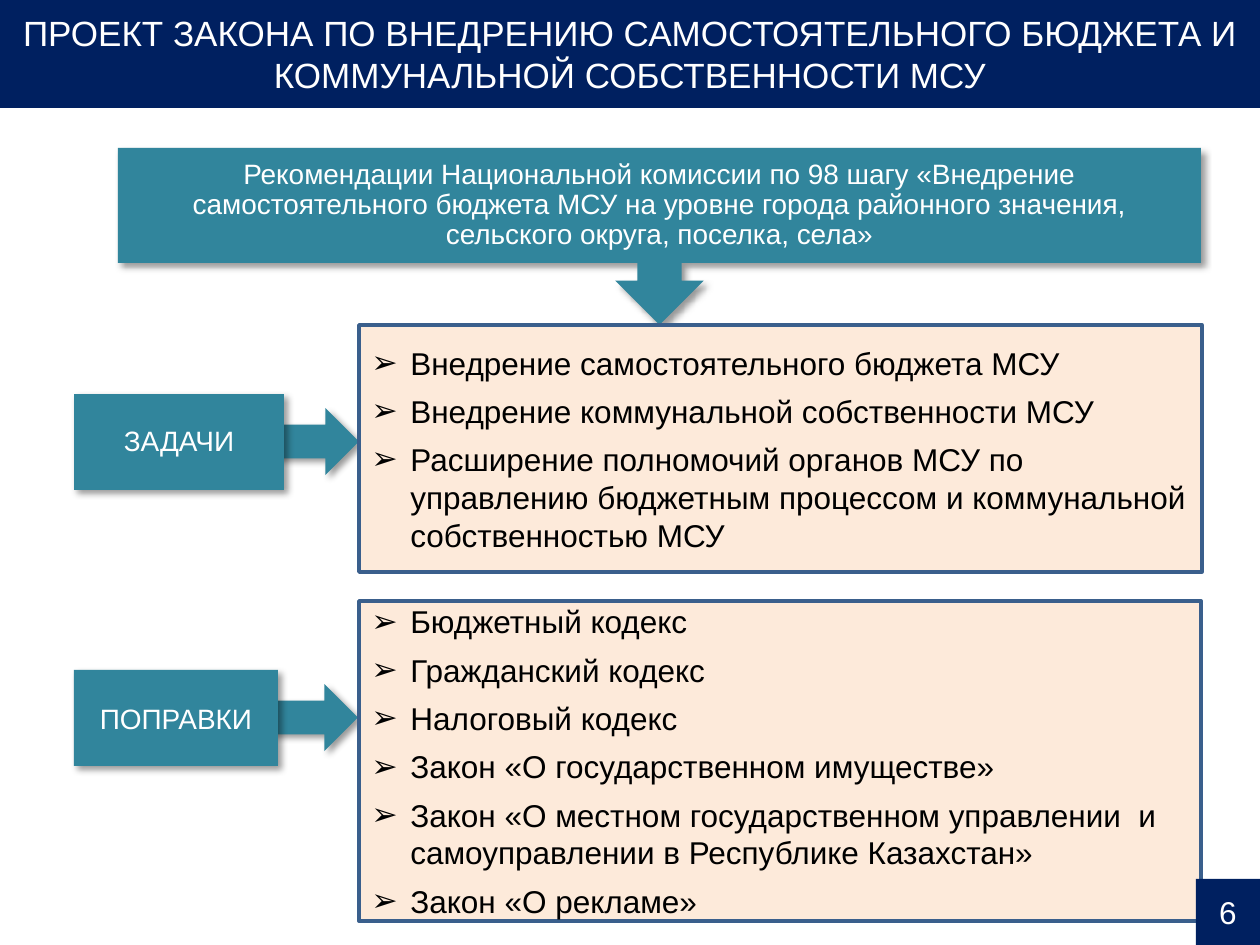
from dataclasses import dataclass

from lxml.etree import SubElement
from pptx import Presentation
from pptx.dml.color import RGBColor
from pptx.enum.shapes import MSO_SHAPE as Preset
from pptx.enum.text import MSO_ANCHOR as Anchor, PP_ALIGN as Align
from pptx.oxml.ns import qn
from pptx.util import Pt

EMU_PER_PX = 914400 / 126
SLIDE_WIDTH, SLIDE_HEIGHT = 1260, 945


def emu(px):
    return round(px * EMU_PER_PX)


@dataclass(frozen=True)
class Theme:
    font: str = "Arial"
    navy: str = "002060"
    teal: str = "31859C"
    peach: str = "FDEADA"
    border: str = "3A5F8C"
    white: str = "FFFFFF"
    black: str = "000000"
    title_size: int = 20
    label_size: int = 16
    list_size: int = 18


class SlideBuilder:
    def __init__(self, slide, theme):
        self.slide = slide
        self.theme = theme

    def block(self, preset, box, fill, border=None):
        shape = self.slide.shapes.add_shape(preset, *map(emu, box))
        shape.shadow.inherit = False
        shape.fill.solid()
        shape.fill.fore_color.rgb = RGBColor.from_string(fill)
        if border:
            shape.line.color.rgb = RGBColor.from_string(border)
            shape.line.width = Pt(2)
        else:
            shape.line.fill.background()
        shape.text_frame.word_wrap = True
        shape.text_frame.vertical_anchor = Anchor.MIDDLE
        return shape

    def add_shadow(self, shape):
        effects = shape._element.spPr.find(qn("a:effectLst"))
        shadow = SubElement(effects, qn("a:outerShdw"), blurRad=str(Pt(4)),
                            dist=str(Pt(3)), dir="2700000", algn="tl", rotWithShape="0")
        color = SubElement(shadow, qn("a:srgbClr"), val=self.theme.black)
        SubElement(color, qn("a:alpha"), val="40000")

    def add_text(self, paragraph, text, size, color, align=Align.CENTER):
        paragraph.alignment = align
        run = paragraph.add_run()
        run.text = text
        run.font.name = self.theme.font
        run.font.size = Pt(size)
        run.font.color.rgb = RGBColor.from_string(color)

    def banner(self, box, text, size):
        shape = self.block(Preset.RECTANGLE, box, self.theme.navy)
        self.add_text(shape.text_frame.paragraphs[0], text, size, self.theme.white)

    def arrow(self, box):
        self.add_shadow(self.block(Preset.RIGHT_ARROW, box, self.theme.teal))

    def label(self, box, text, preset=Preset.RECTANGLE, line_spacing=0.9):
        shape = self.block(preset, box, self.theme.teal)
        self.add_shadow(shape)
        paragraph = shape.text_frame.paragraphs[0]
        paragraph.line_spacing = line_spacing
        self.add_text(paragraph, text, self.theme.label_size, self.theme.white)

    def bullet_list(self, box, items):
        shape = self.block(Preset.RECTANGLE, box, self.theme.peach, self.theme.border)
        frame = shape.text_frame
        for index, item in enumerate(items):
            paragraph = frame.add_paragraph() if index else frame.paragraphs[0]
            self.add_text(paragraph, item, self.theme.list_size, self.theme.black, Align.LEFT)
            paragraph.space_after = Pt(6)
            properties = paragraph._p.get_or_add_pPr()
            properties.set("marL", str(emu(39)))
            properties.set("indent", str(emu(-39)))
            SubElement(properties, qn("a:buFont"), typeface=self.theme.font)
            SubElement(properties, qn("a:buChar"), char="➢")


def main():
    presentation = Presentation()
    presentation.slide_width = emu(SLIDE_WIDTH)
    presentation.slide_height = emu(SLIDE_HEIGHT)
    slide = presentation.slides.add_slide(presentation.slide_layouts[6])
    theme = Theme()
    builder = SlideBuilder(slide, theme)

    for left, top in ((272, 684), (273, 408)):
        builder.arrow((left, top, 86, 67))

    builder.banner((0, -1, SLIDE_WIDTH, 109),
                   "ПРОЕКТ ЗАКОНА ПО ВНЕДРЕНИЮ САМОСТОЯТЕЛЬНОГО БЮДЖЕТА "
                   "И КОММУНАЛЬНОЙ СОБСТВЕННОСТИ МСУ", theme.title_size)
    builder.label((118, 148, 1083, 177),
                  "Рекомендации Национальной комиссии по 98 шагу «Внедрение "
                  "самостоятельного бюджета МСУ на уровне города районного значения, "
                  "сельского округа, поселка, села»", Preset.DOWN_ARROW_CALLOUT)

    builder.bullet_list((359, 325, 843, 247), (
        "Внедрение самостоятельного бюджета МСУ",
        "Внедрение коммунальной собственности МСУ",
        "Расширение полномочий органов МСУ по управлению бюджетным процессом "
        "и коммунальной собственностью МСУ",
    ))
    builder.label((74, 394, 210, 96), "ЗАДАЧИ")

    builder.bullet_list((359, 601, 842, 320), (
        "Бюджетный кодекс",
        "Гражданский кодекс",
        "Налоговый кодекс",
        "Закон «О государственном имуществе»",
        "Закон «О местном государственном управлении  и самоуправлении "
        "в Республике Казахстан»",
        "Закон «О рекламе»",
    ))
    builder.label((74, 670, 204, 96), "ПОПРАВКИ", line_spacing=1.0)

    builder.banner((1196, 879, 64, 66), "6", theme.list_size)
    presentation.save("out.pptx")


if __name__ == "__main__":
    main()
